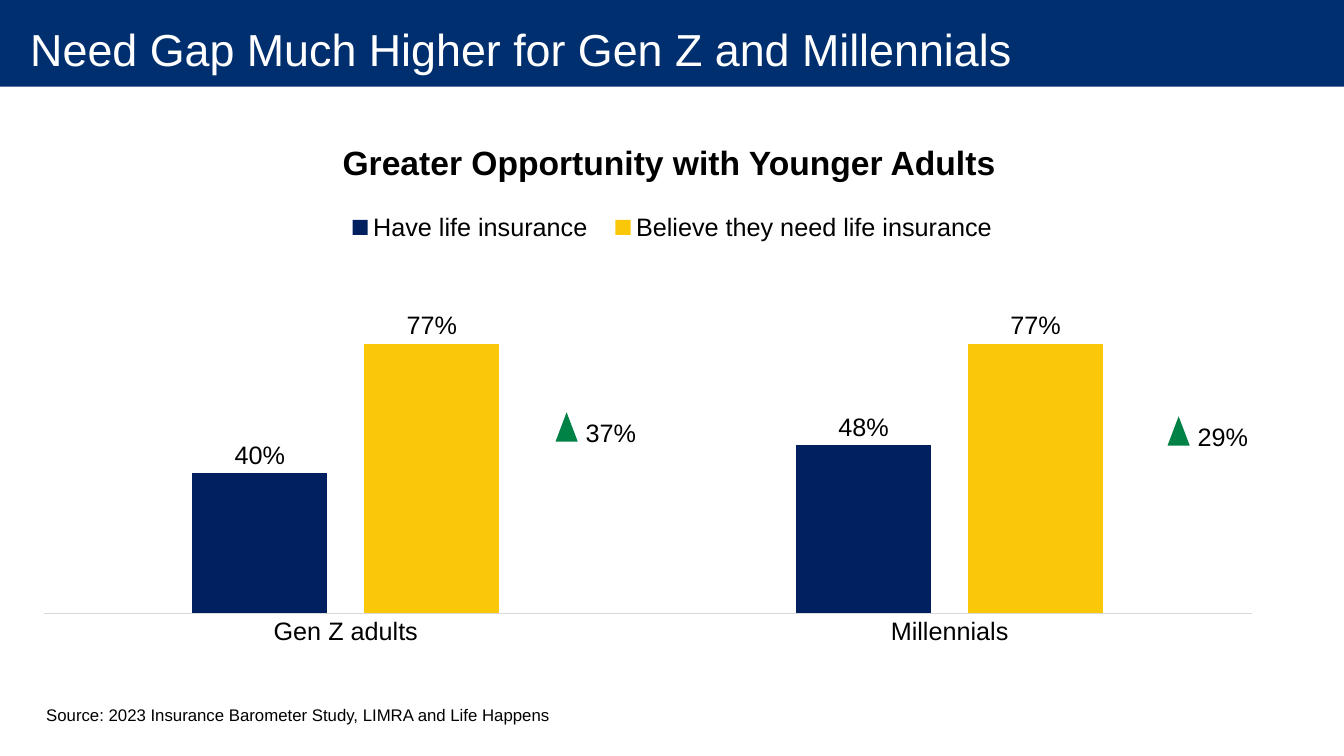
"""Build the slide on the life insurance need gap among younger adults."""

from dataclasses import dataclass

from lxml import etree
from pptx import Presentation
from pptx.chart.chart import Chart
from pptx.chart.data import CategoryChartData
from pptx.dml.color import RGBColor
from pptx.enum.chart import XL_CHART_TYPE, XL_LABEL_POSITION, XL_LEGEND_POSITION, XL_TICK_MARK
from pptx.enum.shapes import MSO_SHAPE
from pptx.enum.text import MSO_ANCHOR, MSO_AUTO_SIZE, PP_ALIGN
from pptx.oxml.ns import qn
from pptx.slide import Slide
from pptx.text.text import Font, TextFrame
from pptx.util import Emu, Pt

RECTANGLE = MSO_SHAPE.RECTANGLE
TRIANGLE = MSO_SHAPE.ISOSCELES_TRIANGLE
COLUMNS = XL_CHART_TYPE.COLUMN_CLUSTERED
OUTSIDE_END = XL_LABEL_POSITION.OUTSIDE_END
LEGEND_BOTTOM = XL_LEGEND_POSITION.BOTTOM
NO_TICKS = XL_TICK_MARK.NONE
MIDDLE = MSO_ANCHOR.MIDDLE
LEFT = PP_ALIGN.LEFT
GROW = MSO_AUTO_SIZE.SHAPE_TO_FIT_TEXT
NO_AUTO_SIZE = MSO_AUTO_SIZE.NONE

EMU_PER_PX = 9144


@dataclass(frozen=True)
class Theme:
    """Colours, font and type sizes of the slide."""

    font: str = "Arial"
    band: str = "002F70"
    have: str = "002060"
    need: str = "FAC809"
    gap: str = "008145"
    axis: str = "D9D9D9"
    text: str = "000000"
    light: str = "FFFFFF"
    title_size: int = 32
    heading_size: int = 24
    label_size: int = 18
    source_size: int = 12
    chart_size: int = 10


@dataclass(frozen=True)
class Area:
    """Place and size in px."""

    left: int
    top: int
    width: int
    height: int

    def emu(self) -> tuple[Emu, Emu, Emu, Emu]:
        """Return the four lengths in EMU."""
        return px(self.left), px(self.top), px(self.width), px(self.height)


@dataclass(frozen=True)
class Bars:
    """One chart series."""

    name: str
    values: tuple[float, ...]
    colour: str


@dataclass(frozen=True)
class GapMarker:
    """A triangle with the size of the need gap."""

    text: str
    left: int
    top: int


@dataclass(frozen=True)
class Caption:
    """A single line of text in its own box."""

    text: str
    area: Area
    size: int
    bold: bool = False


THEME = Theme()
SLIDE = Area(0, 0, 1333, 750)
BAND = Area(0, 0, 1333, 86)
TITLE = Area(0, 0, 1333, 97)
CHART = Area(43, 104, 1247, 593)
PLOT_LAYOUT = (0, 0.324, 0.961, 0.527)
LEGEND_LAYOUT = (0.23, 0.17, 0.54, 0.07)
CATEGORIES = ("Gen Z adults", "Millennials")
SERIES = (
    Bars("Have life insurance", (0.40, 0.48), THEME.have),
    Bars("Believe they need life insurance", (0.77, 0.77), THEME.need),
)
MARKERS = (GapMarker("37%", 551, 409), GapMarker("29%", 1158, 413))
CAPTIONS = (
    Caption("Greater Opportunity with Younger Adults", Area(330, 136, 673, 50),
            THEME.heading_size, True),
    Caption("Source: 2023 Insurance Barometer Study, LIMRA and Life Happens",
            Area(36, 694, 524, 30), THEME.source_size),
)


def px(length: int) -> Emu:
    """Turn px into EMU."""
    return Emu(length * EMU_PER_PX)


def style_font(font: Font, size: int, colour: str = THEME.text, bold: bool = False) -> None:
    """Set typeface, size, colour and weight."""
    font.name = THEME.font
    font.size = Pt(size)
    font.bold = bold
    font.color.rgb = RGBColor.from_string(colour)


def write(frame: TextFrame, text: str, size: int, colour: str = THEME.text,
          bold: bool = False) -> None:
    """Write one left-aligned run into a text frame."""
    para = frame.paragraphs[0]
    para.alignment = LEFT
    span = para.add_run()
    span.text = text
    style_font(span.font, size, colour, bold)


def add_filled(shapes, preset: MSO_SHAPE, area: Area, colour: str):
    """Add a plain filled shape without outline."""
    shape = shapes.add_shape(preset, *area.emu())
    shape.shadow.inherit = False
    shape.fill.solid()
    shape.fill.fore_color.rgb = RGBColor.from_string(colour)
    shape.line.fill.background()
    return shape


def add_caption(shapes, caption: Caption) -> None:
    """Add a text box that fits its single line."""
    frame = shapes.add_textbox(*caption.area.emu()).text_frame
    frame.word_wrap = False
    frame.auto_size = GROW
    write(frame, caption.text, caption.size, bold=caption.bold)


def add_title(page: Slide, text: str) -> None:
    """Set the title on its band."""
    title = page.shapes.title
    title.left, title.top, title.width, title.height = TITLE.emu()
    frame = title.text_frame
    frame.margin_left, frame.margin_right = px(30), px(20)
    frame.margin_top = frame.margin_bottom = 0
    frame.vertical_anchor = MIDDLE
    frame.word_wrap = True
    frame.auto_size = NO_AUTO_SIZE
    write(frame, text, THEME.title_size, THEME.light)
    band = add_filled(page.shapes, RECTANGLE, BAND, THEME.band)
    title.element.addprevious(band.element)


def set_layout(parent, after: str, values: tuple[float, ...], inner: bool = False) -> None:
    """Place a chart part by fractions of the chart area."""
    for old in parent.findall(qn("c:layout")):
        parent.remove(old)
    layout = etree.Element(qn("c:layout"))
    manual = etree.SubElement(layout, qn("c:manualLayout"))
    settings = [("layoutTarget", "inner")] if inner else []
    settings += [("xMode", "edge"), ("yMode", "edge"), *zip("xywh", values)]
    for name, value in settings:
        etree.SubElement(manual, qn(f"c:{name}")).set("val", str(value))
    if after:
        parent.find(qn(after)).addnext(layout)
    else:
        parent.insert(0, layout)


def style_axes(chart: Chart) -> None:
    """Show the category line and hide the value axis."""
    values = chart.value_axis
    values.minimum_scale, values.maximum_scale = 0, 0.9
    values.has_major_gridlines = False
    values.tick_labels.number_format = "0%"
    values.tick_labels.number_format_is_linked = False
    values.visible = False
    ages = chart.category_axis
    ages.major_tick_mark = ages.minor_tick_mark = NO_TICKS
    ages.format.line.color.rgb = RGBColor.from_string(THEME.axis)
    ages.format.line.width = Pt(0.75)
    style_font(ages.tick_labels.font, THEME.label_size)


def add_need_chart(page: Slide) -> None:
    """Add the column chart of ownership and need."""
    data = CategoryChartData(number_format="0%")
    data.categories = CATEGORIES
    for bars in SERIES:
        data.add_series(bars.name, bars.values)
    chart = page.shapes.add_chart(COLUMNS, *CHART.emu(), data).chart
    style_font(chart.font, THEME.chart_size)
    chart.has_title = False
    style_axes(chart)
    plot = chart.plots[0]
    plot.gap_width, plot.overlap, plot.vary_by_categories = 219, -27, False
    for bars, series in zip(SERIES, plot.series):
        series.format.fill.solid()
        series.format.fill.fore_color.rgb = RGBColor.from_string(bars.colour)
        labels = series.data_labels
        labels.show_value = True
        labels.position = OUTSIDE_END
        labels.number_format, labels.number_format_is_linked = "0%", False
        style_font(labels.font, THEME.label_size)
    chart.has_legend = True
    chart.legend.position = LEGEND_BOTTOM
    chart.legend.include_in_layout = False
    style_font(chart.legend.font, THEME.label_size)
    root = chart.element
    set_layout(root.find(f".//{qn('c:plotArea')}"), "", PLOT_LAYOUT, inner=True)
    set_layout(root.find(f".//{qn('c:legend')}"), "c:legendPos", LEGEND_LAYOUT)


def add_marker(page: Slide, marker: GapMarker) -> None:
    """Add a grouped triangle and gap value."""
    shapes = page.shapes.add_group_shape().shapes
    add_filled(shapes, TRIANGLE, Area(marker.left, marker.top, 22, 29), THEME.gap)
    area = Area(marker.left + 20, marker.top, 71, 40)
    add_caption(shapes, Caption(marker.text, area, THEME.label_size))


def main() -> None:
    """Build and save the deck."""
    deck = Presentation()
    deck.slide_width, deck.slide_height = px(SLIDE.width), px(SLIDE.height)
    page = deck.slides.add_slide(deck.slide_layouts.get_by_name("Title Only"))
    add_title(page, "Need Gap Much Higher for Gen Z and Millennials")
    add_need_chart(page)
    for marker in MARKERS:
        add_marker(page, marker)
    for caption in CAPTIONS:
        add_caption(page.shapes, caption)
    deck.save("out.pptx")


if __name__ == "__main__":
    main()
